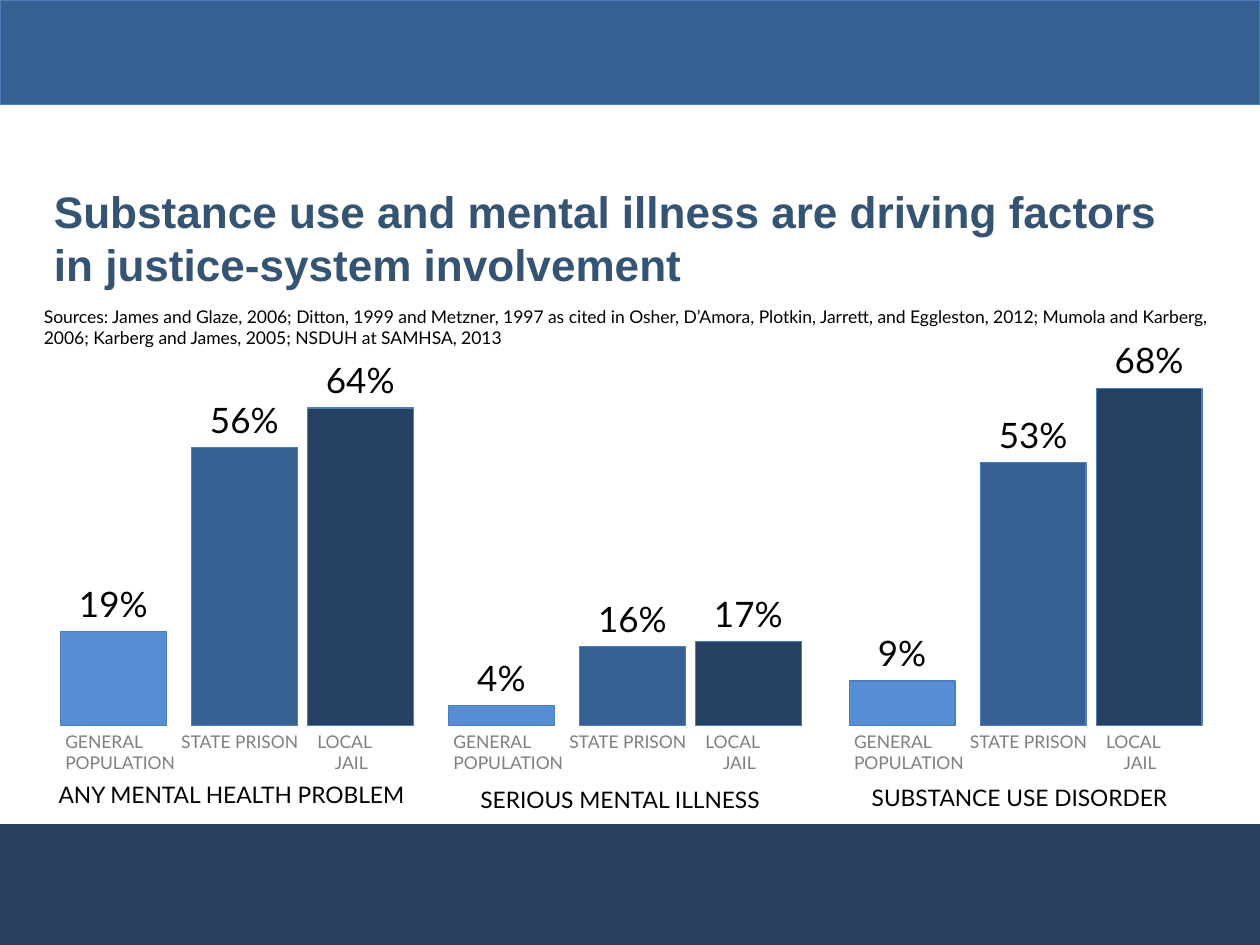
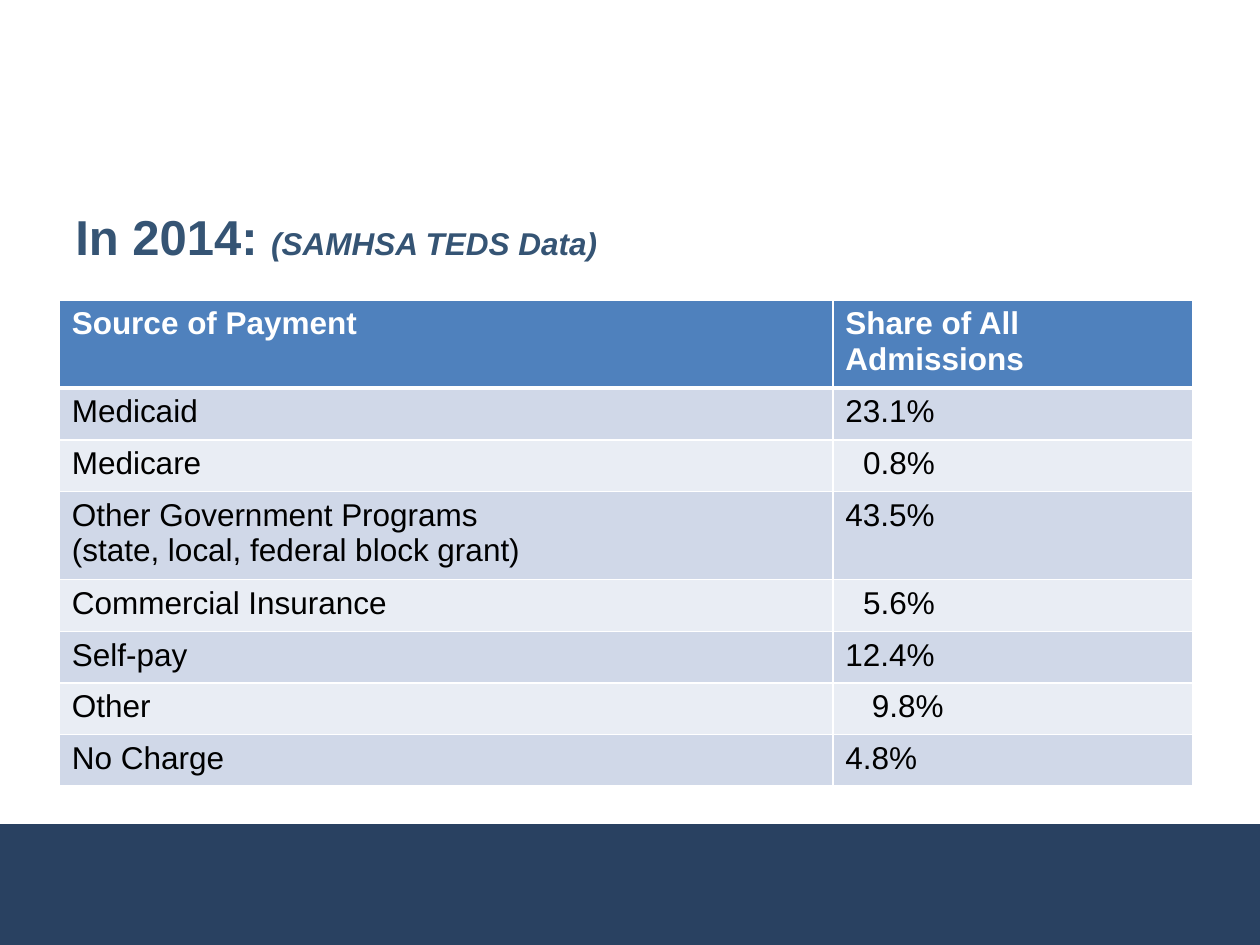
from dataclasses import dataclass

from lxml import etree
from pptx import Presentation
from pptx.dml.color import RGBColor
from pptx.enum.shapes import MSO_SHAPE
from pptx.enum.text import MSO_ANCHOR, PP_ALIGN
from pptx.oxml.ns import qn
from pptx.util import Inches, Pt

# Shared style
HEAD_FONT, BODY_FONT = "Arial", "Lato"
TITLE, FOOTER, OUTLINE = "355474", "294161", "4B7EBC"
BLACK, WHITE, GREY = "000000", "FFFFFF", "7F7F7F"
LIGHT, MID, DARK = "558ED5", "376092", "254061"
HEADER_FILL, BAND_FILLS = "4F81BD", ("D0D8E8", "E9EDF4")

# Bar geometry, in inches
BASELINE, BAR_W, INCHES_PER_PERCENT = 5.76, 0.84, 0.0394
BAR_OFFSETS, BAR_FILLS = (0, 1.04, 1.96), (LIGHT, MID, DARK)
LABEL_W, LABEL_H = 0.86, 0.44

# Category lines under each bar group, with their tab stops
CATEGORY_LINES = (
    ("GENERAL\tSTATE PRISON\tLOCAL", (0.92, 2.0)),
    ("POPULATION\tJAIL", (2.14,)),
)


@dataclass
class Run:
    text: str
    size: float
    color: str = BLACK
    font: str = BODY_FONT
    bold: bool = False
    italic: bool = False


@dataclass
class BarGroup:
    name: str
    left: float
    values: tuple[int, int, int]
    name_left: float
    name_top: float
    name_width: float = 3


@dataclass
class Payment:
    source: str
    share: str
    indent: float = 0


GROUPS = (
    BarGroup("ANY MENTAL HEALTH PROBLEM", 0.48, (19, 56, 64), 0.25, 6.15, 3.17),
    BarGroup("SERIOUS MENTAL ILLNESS", 3.56, (4, 16, 17), 3.42, 6.19),
    BarGroup("SUBSTANCE USE DISORDER", 6.74, (9, 53, 68), 6.59, 6.17),
)

PAYMENTS = (
    Payment("Medicaid", "23.1%"),
    Payment("Medicare", "0.8%", 0.14),
    Payment("Other Government Programs\n(state, local, federal block grant)", "43.5%"),
    Payment("Commercial Insurance", "5.6%", 0.14),
    Payment("Self-pay", "12.4%"),
    Payment("Other", "9.8%", 0.21),
    Payment("No Charge", "4.8%"),
)


def rgb(color: str) -> RGBColor:
    return RGBColor.from_string(color)


def style_run(r, run: Run) -> None:
    r.font.name, r.font.size = run.font, Pt(run.size)
    r.font.bold, r.font.italic = run.bold, run.italic
    r.font.color.rgb = rgb(run.color)


def add_text(slide, left: float, top: float, width: float, height: float,
             runs: list[Run], align=PP_ALIGN.LEFT, anchor=MSO_ANCHOR.TOP):
    box = slide.shapes.add_textbox(Inches(left), Inches(top), Inches(width), Inches(height))
    tf = box.text_frame
    tf.word_wrap, tf.vertical_anchor = True, anchor
    p = tf.paragraphs[0]
    p.alignment = align
    for run in runs:
        r = p.add_run()
        r.text = run.text
        style_run(r, run)
    return tf


def add_rect(slide, left: float, top: float, width: float, height: float,
             fill: str, line: str | None = None) -> None:
    sp = slide.shapes.add_shape(MSO_SHAPE.RECTANGLE, Inches(left), Inches(top),
                                Inches(width), Inches(height))
    sp.shadow.inherit = False
    sp.fill.solid()
    sp.fill.fore_color.rgb = rgb(fill)
    if line:
        sp.line.color.rgb = rgb(line)
        sp.line.width = Pt(0.75)
    else:
        sp.line.fill.background()


def add_slide(prs, left: float, top: float, width: float, title: list[Run]):
    """Start a slide with the footer band and a title."""
    slide = prs.slides.add_slide(prs.slide_layouts[6])
    add_rect(slide, 0, 6.54, 10, 0.96, FOOTER)
    add_text(slide, left, top, width, 0.92, title, anchor=MSO_ANCHOR.MIDDLE)
    return slide


def title_run(text: str, size: float, italic: bool = False) -> Run:
    return Run(text, size, TITLE, HEAD_FONT, True, italic)


def set_tabs(p, stops: tuple[float, ...]) -> None:
    tabs = etree.SubElement(p._p.get_or_add_pPr(), qn("a:tabLst"))
    for stop in stops:
        etree.SubElement(tabs, qn("a:tab"), pos=str(Inches(stop)), algn="l")


def add_categories(slide, left: float) -> None:
    tf = add_text(slide, left, 5.75, 3, 0.44, [])
    for i, (line, stops) in enumerate(CATEGORY_LINES):
        p = tf.paragraphs[0] if i == 0 else tf.add_paragraph()
        set_tabs(p, stops)
        r = p.add_run()
        r.text = line
        style_run(r, Run(line, 10, GREY))


def add_bar_group(slide, group: BarGroup) -> None:
    for value, offset, fill in zip(group.values, BAR_OFFSETS, BAR_FILLS):
        left, height = group.left + offset, value * INCHES_PER_PERCENT
        top = BASELINE - height
        add_rect(slide, left, top, BAR_W, height, fill, OUTLINE)
        add_text(slide, left - 0.01, top - LABEL_H, LABEL_W, LABEL_H,
                 [Run(f"{value}%", 20)], PP_ALIGN.CENTER)
    add_categories(slide, group.left - 0.06)
    add_text(slide, group.name_left, group.name_top, group.name_width, 0.32,
             [Run(group.name, 13)], PP_ALIGN.CENTER)


def set_borders(cell, bottom: float) -> None:
    """White cell borders; they must come before the fill element."""
    tc_pr = cell._tc.get_or_add_tcPr()
    for i, (side, width) in enumerate((("L", 1), ("R", 1), ("T", 1), ("B", bottom))):
        ln = etree.Element(qn(f"a:ln{side}"), w=str(Pt(width)))
        fill = etree.SubElement(ln, qn("a:solidFill"))
        etree.SubElement(fill, qn("a:srgbClr"), val=WHITE)
        tc_pr.insert(i, ln)


def fill_cell(cell, text: str, fill: str, header: bool = False, indent: float = 0) -> None:
    cell.text_frame.text = text
    cell.margin_left = Inches(0.1 + indent)
    cell.fill.solid()
    cell.fill.fore_color.rgb = rgb(fill)
    set_borders(cell, 3 if header else 1)
    for p in cell.text_frame.paragraphs:
        for r in p.runs:
            style_run(r, Run(r.text, 18, WHITE if header else BLACK, HEAD_FONT, header))


def build_bars_slide(prs) -> None:
    slide = add_slide(prs, 0.33, 1.42, 9.17, [title_run(
        "Substance use and mental illness are driving factors "
        "in justice-system involvement", 25.2)])
    add_rect(slide, 0, 0, 10, 0.83, MID, OUTLINE)
    add_text(slide, 0.25, 2.38, 9.75, 0.44, [Run(
        "Sources: James and Glaze, 2006; Ditton, 1999 and Metzner, 1997 as cited in Osher, "
        "D’Amora, Plotkin, Jarrett, and Eggleston, 2012; Mumola and Karberg, 2006; "
        "Karberg and James, 2005; NSDUH at SAMHSA, 2013", 10)])
    for group in GROUPS:
        add_bar_group(slide, group)


def build_payment_slide(prs) -> None:
    slide = add_slide(prs, 0.5, 1.41, 9, [
        title_run("In 2014: ", 28), title_run("(SAMHSA TEDS Data)", 18, True)])
    rows = len(PAYMENTS) + 1
    table = slide.shapes.add_table(rows, 2, Inches(0.47), Inches(2.38),
                                   Inches(9), Inches(0.41 * rows)).table
    table.columns[0].width, table.columns[1].width = Inches(6.14), Inches(2.86)
    for col, heading in enumerate(("Source of Payment", "Share of All Admissions")):
        fill_cell(table.cell(0, col), heading, HEADER_FILL, header=True)
    for i, payment in enumerate(PAYMENTS):
        fill = BAND_FILLS[i % 2]
        fill_cell(table.cell(i + 1, 0), payment.source, fill)
        fill_cell(table.cell(i + 1, 1), payment.share, fill, indent=payment.indent)


def main() -> None:
    prs = Presentation()
    prs.slide_width, prs.slide_height = Inches(10), Inches(7.5)
    build_bars_slide(prs)
    build_payment_slide(prs)
    prs.save("out.pptx")


if __name__ == "__main__":
    main()
